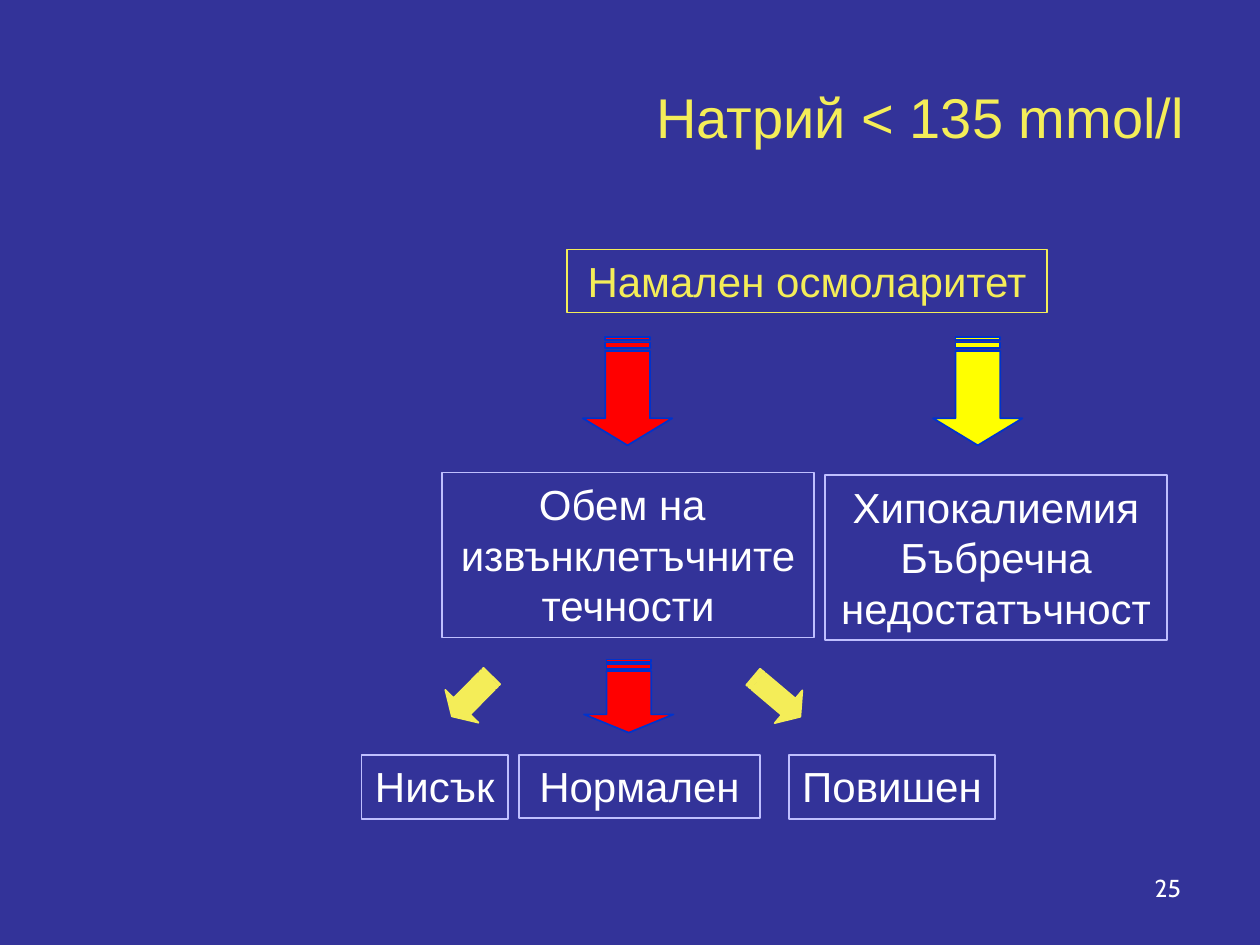
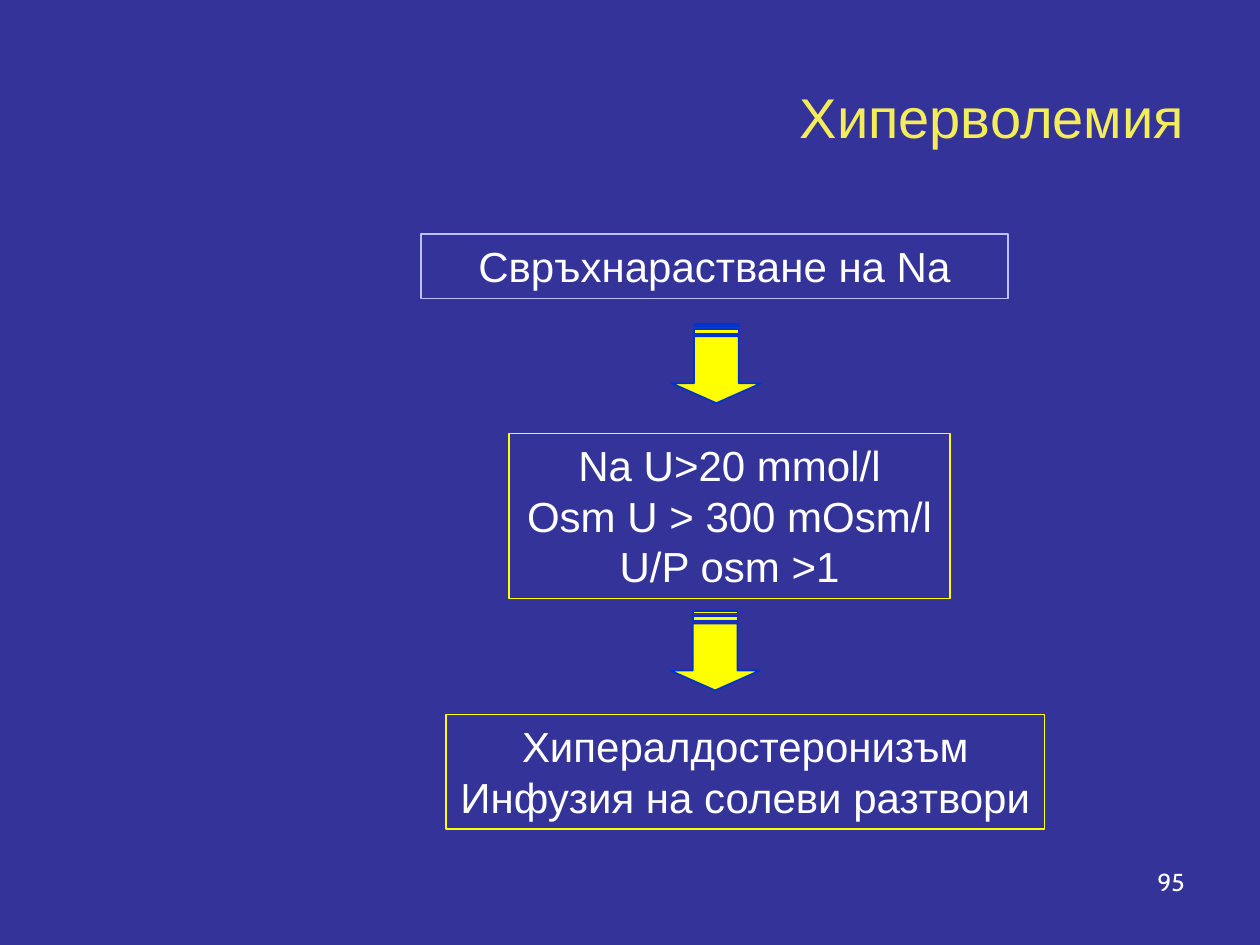
"""Build two flowchart slides on sodium and volume disorders."""
from pptx import Presentation
from pptx.dml.color import RGBColor
from pptx.enum.shapes import MSO_SHAPE
from pptx.enum.text import MSO_ANCHOR, MSO_AUTO_SIZE, PP_ALIGN
from pptx.util import Inches, Pt

BACKGROUND = RGBColor(0x33, 0x33, 0x99)
TITLE_YELLOW = RGBColor(0xF4, 0xED, 0x58)
YELLOW = RGBColor(0xFF, 0xFF, 0x00)
RED = RGBColor(0xFF, 0x00, 0x00)
BLUE = RGBColor(0x00, 0x33, 0xCC)
LAVENDER = RGBColor(0xBF, 0xBF, 0xFF)
WHITE = RGBColor(0xFF, 0xFF, 0xFF)

SLIDES = [
    {
        "title": ("Натрий < 135 mmol/l", 2.61, 6.89),
        "number": ("25", 7.14, 6.88),
        "boxes": [
            ("Намален осмоларитет", 4.5, 1.98, 3.81, 0.5, TITLE_YELLOW, TITLE_YELLOW, True),
            ("Хипокалиемия\nБъбречна недостатъчност", 6.55, 3.77, 2.71, 1.31, LAVENDER, WHITE, True),
            ("Обем на \nизвънклетъчните течности", 3.51, 3.75, 2.95, 1.31, LAVENDER, WHITE, True),
            ("Нормален", 4.12, 5.99, 1.91, 0.5, LAVENDER, WHITE, True),
            ("Нисък", 2.87, 5.99, 1.16, 0.51, LAVENDER, WHITE, False),
            ("Повишен", 6.26, 5.99, 1.64, 0.51, LAVENDER, WHITE, False),
        ],
        "arrows": [
            (4.55, 2.75, 0.86, 0.71, 90, RED, BLUE),
            (7.33, 2.75, 0.86, 0.71, 90, YELLOW, BLUE),
            (4.7, 5.17, 0.58, 0.71, 90, RED, BLUE),
            (3.52, 5.34, 0.45, 0.37, 134.7, TITLE_YELLOW, TITLE_YELLOW),
            (5.92, 5.36, 0.49, 0.34, 40.2, TITLE_YELLOW, TITLE_YELLOW),
        ],
    },
    {
        "title": ("Хиперволемия", 0.5, 9),
        "number": ("95", 7.17, 6.83),
        "boxes": [
            ("Свръхнарастване на Na", 3.34, 1.86, 4.66, 0.51, LAVENDER, WHITE, True),
            ("Na U>20 mmol/l\nOsm U > 300 mOsm/l\nU/P osm >1", 4.04, 3.44, 3.5, 1.31, YELLOW, WHITE, True),
            ("Хипералдостеронизъм\nИнфузия на солеви разтвори", 3.54, 5.67, 4.75, 0.91, YELLOW, WHITE, False),
        ],
        "arrows": [
            (5.36, 4.81, 0.63, 0.71, 90, YELLOW, BLUE),
            (5.37, 2.53, 0.63, 0.71, 90, YELLOW, BLUE),
        ],
    },
]


def write_text(text_frame, text, font_name, size, color, alignment):
    """Fill a text frame and format every paragraph alike."""
    text_frame.text = text
    for paragraph in text_frame.paragraphs:
        paragraph.alignment = alignment
        for run in paragraph.runs:
            run.font.name = font_name
            run.font.size = Pt(size)
            run.font.color.rgb = color


def add_outlined_shape(slide, kind, position, line_color):
    """Add a shadowless preset shape with a one-point outline."""
    shape = slide.shapes.add_shape(kind, *[Inches(length) for length in position])
    shape.shadow.inherit = False
    shape.line.color.rgb = line_color
    shape.line.width = Pt(1)
    return shape


presentation = Presentation()
presentation.slide_width = Inches(10)
presentation.slide_height = Inches(7.5)
master_fill = presentation.slide_master.background.fill
master_fill.solid()
master_fill.fore_color.rgb = BACKGROUND

for content in SLIDES:
    slide = presentation.slides.add_slide(presentation.slide_layouts[5])

    text, left, width = content["title"]
    title = slide.shapes.title
    title.left, title.top = Inches(left), Inches(0.3)
    title.width, title.height = Inches(width), Inches(1.25)
    title.text_frame.vertical_anchor = MSO_ANCHOR.MIDDLE
    write_text(title.text_frame, text, "Arial", 32, TITLE_YELLOW, PP_ALIGN.RIGHT)

    text, left, top = content["number"]
    number = slide.shapes.add_textbox(Inches(left), Inches(top), Inches(2.33), Inches(0.52))
    number.text_frame.word_wrap = True
    write_text(number.text_frame, text, "Cabin", 14, WHITE, PP_ALIGN.RIGHT)

    for text, *position, line_color, text_color, wraps in content["boxes"]:
        box = add_outlined_shape(slide, MSO_SHAPE.RECTANGLE, position, line_color)
        box.fill.background()
        box.text_frame.word_wrap = wraps
        box.text_frame.auto_size = MSO_AUTO_SIZE.SHAPE_TO_FIT_TEXT
        box.text_frame.vertical_anchor = MSO_ANCHOR.TOP
        write_text(box.text_frame, text, "Arial", 24, text_color, PP_ALIGN.CENTER)

    for *position, rotation, fill_color, line_color in content["arrows"]:
        arrow = add_outlined_shape(slide, MSO_SHAPE.STRIPED_RIGHT_ARROW, position, line_color)
        arrow.rotation = rotation
        arrow.fill.solid()
        arrow.fill.fore_color.rgb = fill_color
        length, breadth = position[2:]
        arrow.adjustments[1] = 0.25 * length / min(length, breadth)

presentation.save("out.pptx")
